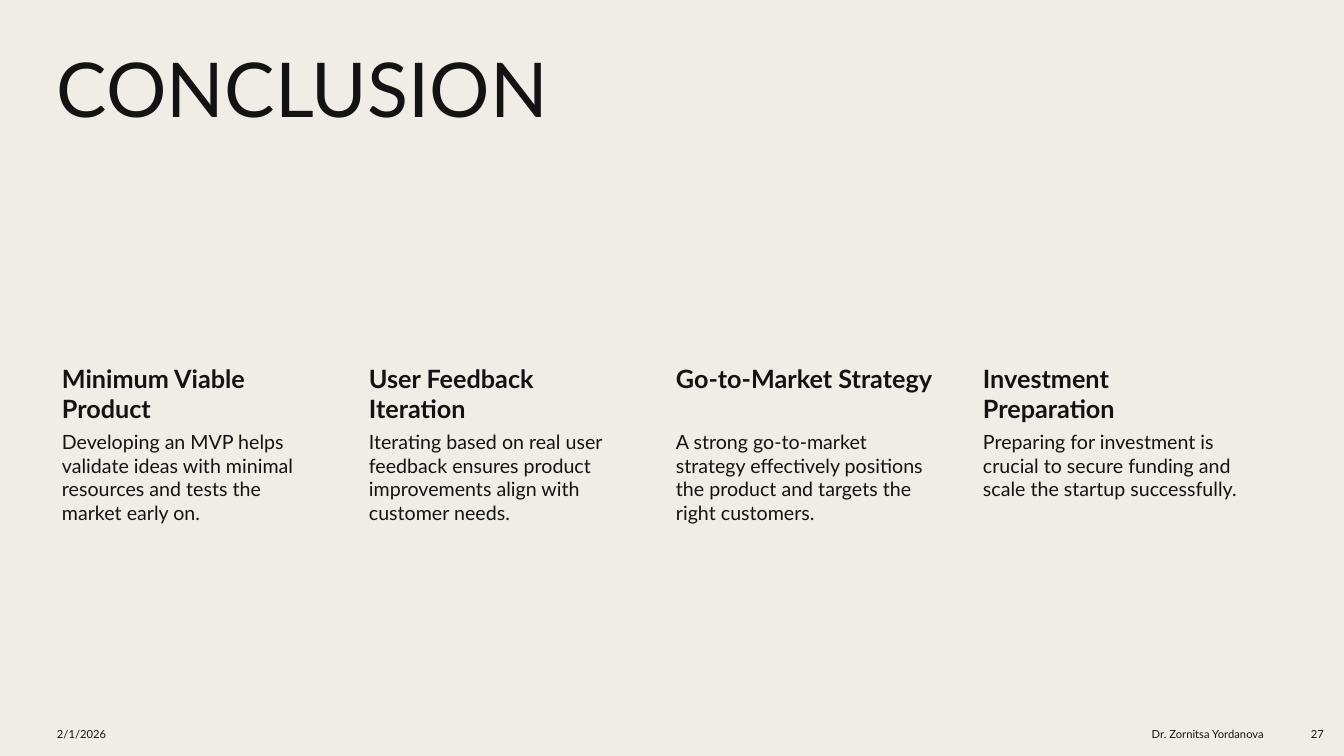
from pptx import Presentation
from pptx.dml.color import RGBColor
from pptx.enum.text import MSO_ANCHOR, MSO_AUTO_SIZE, PP_ALIGN
from pptx.util import Pt

PX = 12192000 / 1344  # EMU per px on a slide 1344 px wide
FONT, INK, PAPER = "Lato", "131313", "F0EDE6"

COLUMNS = [
    ("Minimum Viable Product",
     "Developing an MVP helps validate ideas with minimal resources "
     "and tests the market early on."),
    ("User Feedback Iteration",
     "Iterating based on real user feedback ensures product improvements "
     "align with customer needs."),
    ("Go-to-Market Strategy",
     "A strong go-to-market strategy effectively positions the product "
     "and targets the right customers."),
    ("Investment Preparation",
     "Preparing for investment is crucial to secure funding "
     "and scale the startup successfully."),
]


def px(n):
    return round(n * PX)


def color(code):
    return RGBColor.from_string(code)


def write(sp, box, text, size, insets=(10, 5, 10, 5), bold=False,
          align=PP_ALIGN.LEFT, anchor=MSO_ANCHOR.TOP):
    """Place a text shape in box and set its one paragraph."""
    sp.left, sp.top, sp.width, sp.height = map(px, box)
    tf = sp.text_frame
    tf.word_wrap = True
    tf.auto_size = MSO_AUTO_SIZE.NONE
    tf.vertical_anchor = anchor
    tf.margin_left, tf.margin_top, tf.margin_right, tf.margin_bottom = map(px, insets)
    p = tf.paragraphs[0]
    p.text = text
    p.alignment = align
    p.font.name = FONT
    p.font.size = Pt(size)
    p.font.bold = bold
    p.font.color.rgb = color(INK)
    return p


def add_text(s, box, *args, **kwargs):
    return write(s.shapes.add_textbox(0, 0, 0, 0), box, *args, **kwargs)


def add_title(s, box, text):
    p = write(s.shapes.title, box, text, 54)
    p.line_spacing = 0.9


def add_columns(s, box, columns, gap=28, head_h=68):
    """Equal columns, each a bold heading above its body text."""
    left, top, width, height = box
    col_w = (width - gap * (len(columns) - 1)) // len(columns)
    for i, (heading, body) in enumerate(columns):
        x = left + i * (col_w + gap)
        add_text(s, (x, top, col_w, head_h), heading, 18, (15, 3, 3, 3), bold=True)
        add_text(s, (x, top + head_h, col_w, height - head_h), body, 14, (15, 2, 2, 2))


def add_footer(s, box, date, author, number):
    left, top, width, height = box
    right = left + width
    for x, w, text, align in [
        (left, 313, date, PP_ALIGN.LEFT),
        (right - 353, 293, author, PP_ALIGN.RIGHT),
        (right - 50, 50, number, PP_ALIGN.RIGHT),
    ]:
        add_text(s, (x, top, w, height), text, 8, align=align, anchor=MSO_ANCHOR.MIDDLE)


def main():
    prs = Presentation()
    prs.slide_width, prs.slide_height = px(1344), px(756)
    s = prs.slides.add_slide(prs.slide_layouts[5])
    s.background.fill.solid()
    s.background.fill.fore_color.rgb = color(PAPER)

    add_title(s, (47, 47, 1200, 180), "CONCLUSION")
    add_columns(s, (47, 360, 1200, 310), COLUMNS)
    add_footer(s, (47, 716, 1287, 37), "2/1/2026", "Dr. Zornitsa Yordanova", "27")

    prs.save("out.pptx")


if __name__ == "__main__":
    main()
